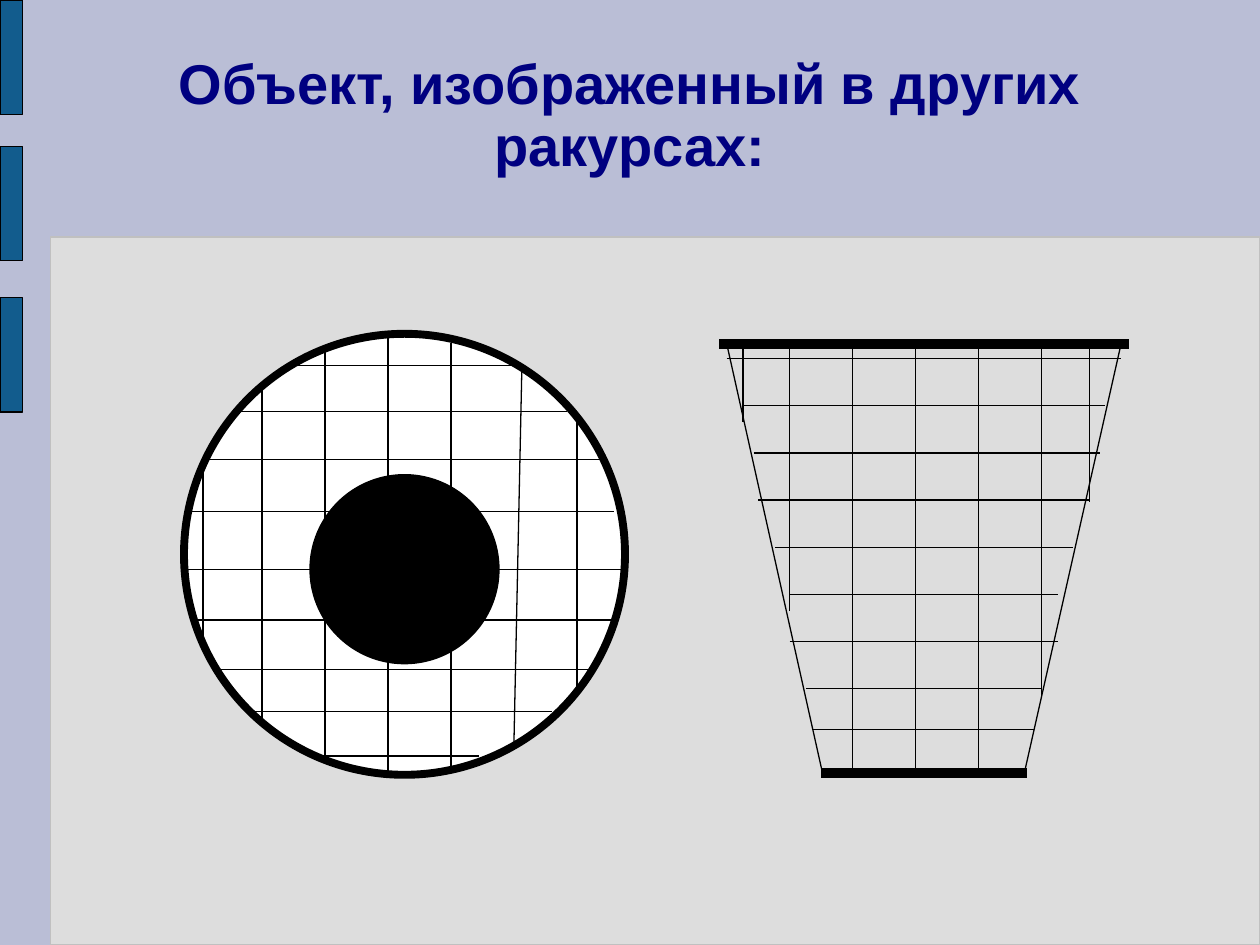
from pptx import Presentation
from pptx.dml.color import RGBColor
from pptx.enum import shapes, text
from pptx.oxml.ns import qn
from pptx.util import Cm, Pt
from lxml import etree

BACK = RGBColor(0xBA, 0xBE, 0xD6)
PANEL = RGBColor(0xDD, 0xDD, 0xDD)
PANEL_EDGE = RGBColor(0xC0, 0xC0, 0xC0)
TAB = RGBColor(0x12, 0x5C, 0x8D)
NAVY = RGBColor(0x00, 0x00, 0x80)
BLACK = RGBColor(0, 0, 0)
WHITE = RGBColor(0xFF, 0xFF, 0xFF)
SHAPE = shapes.MSO_SHAPE


def add_shape(parent, kind, x, y, w, h, fill, line=BLACK, width=0.75):
    sp = parent.shapes.add_shape(kind, Cm(x), Cm(y), Cm(w), Cm(h))
    sp.shadow.inherit = False
    sp.fill.solid()
    sp.fill.fore_color.rgb = fill
    sp.line.color.rgb = line
    sp.line.width = Pt(width)


def add_line(parent, x1, y1, x2, y2, width=0.75):
    ln = parent.shapes.add_connector(
        shapes.MSO_CONNECTOR.STRAIGHT, Cm(x1), Cm(y1), Cm(x2), Cm(y2))
    ln.line.color.rgb = BLACK
    ln.line.width = Pt(width)
    etree.SubElement(ln._element.spPr, qn("a:effectLst"))


def add_grid(parent, x, y, columns, rows):
    """Columns are (x, top, bottom), rows are (y, left, right)."""
    for cx, top, bottom in columns:
        add_line(parent, x + cx, y + top, x + cx, y + bottom)
    for ry, left, right in rows:
        add_line(parent, x + left, y + ry, x + right, y + ry)


def backdrop(s, w, h):
    s.background.fill.solid()
    s.background.fill.fore_color.rgb = BACK
    # Content panel
    x, y = 1.02, 4.78
    add_shape(s, SHAPE.RECTANGLE, x, y, w - x, h - y, PANEL, PANEL_EDGE)
    # Tabs on the left edge
    for top in (0, 2.95, 6):
        add_shape(s, SHAPE.RECTANGLE, 0, top, 0.46, 2.31, TAB)


def title(s, x, y, w, h):
    tf = s.shapes.add_textbox(Cm(x), Cm(y), Cm(w), Cm(h)).text_frame
    tf.word_wrap = True
    tf.vertical_anchor = text.MSO_ANCHOR.MIDDLE
    p = tf.paragraphs[0]
    p.alignment = text.PP_ALIGN.CENTER
    p.line_spacing = 0.93
    r = p.add_run()
    r.text = "Объект, изображенный в других ракурсах:"
    r.font.name = "Arial"
    r.font.size = Pt(32)
    r.font.bold = True
    r.font.color.rgb = NAVY


def side_view(s, x, y, w, h):
    g = s.shapes.add_group_shape()
    # Base and rim
    add_line(g, x + 2.06, y + h, x + 6.2, y + h, 6)
    add_line(g, x, y, x + w, y, 6)
    # Slanted walls
    add_line(g, x + 0.15, y, x + 2.06, y + 8.56)
    add_line(g, x + 8.1, y, x + 6.17, y + 8.56)
    # Mesh
    spans = [(0, 5.38), (0.05, 8.61), (0, 8.56), (0, 8.56), (0.1, 7.09)]
    columns = [(1.42 + 1.27 * i, *span) for i, span in enumerate(spans)]
    columns += [(0.48, 0, 1.57), (7.47, 0, 3.18)]
    spans = [(0.15, 8.1), (0.48, 7.77), (0.69, 7.67), (0.79, 7.47),
             (1.12, 7.14), (1.42, 6.83), (1.42, 6.83), (1.75, 6.5)]
    rows = [(0.3 + 0.95 * i, *span) for i, span in enumerate(spans)]
    rows.append((7.77, 1.9, 6.35))
    add_grid(g, x, y, columns, rows)


def top_view(s, x, y, size):
    g = s.shapes.add_group_shape()
    # Rim
    add_shape(g, SHAPE.OVAL, x, y, size, size, WHITE, width=4.5)
    # Mesh
    spans = [(1.07, 7.75), (0.3, 8.56), (0, size), (0.18, 8.76)]
    columns = [(1.57 + 1.27 * i, *span) for i, span in enumerate(spans)]
    columns += [(0.38, 2.74, 6.25), (7.92, 1.78, 7.16)]
    rows = [(0.64, 2.21, 6.65), (1.57, 1.04, 7.72), (2.54, 0.43, 8.38),
            (3.58, 0.1, 8.66), (4.75, 0, size), (5.77, 0.18, 8.74),
            (6.76, 0.64, 8.26), (7.62, 1.4, 7.42), (8.51, 2.77, 5.94)]
    add_grid(g, x, y, columns, rows)
    add_line(g, x + 6.81, y + 0.69, x + 6.65, y + 8.26)
    # Bottom
    add_shape(g, SHAPE.OVAL, x + 2.54, y + 2.84, 3.81, 3.81, BLACK)


def main():
    prs = Presentation()
    prs.slide_width, prs.slide_height = Cm(25.4), Cm(19.05)
    s = prs.slides.add_slide(prs.slide_layouts[6])
    backdrop(s, 25.4, 19.05)
    title(s, 1.27, 0.76, 22.86, 3.18)
    side_view(s, 14.5, 6.93, 8.26, 8.65)
    top_view(s, 3.71, 6.73, 8.89)
    prs.save("out.pptx")


if __name__ == "__main__":
    main()
